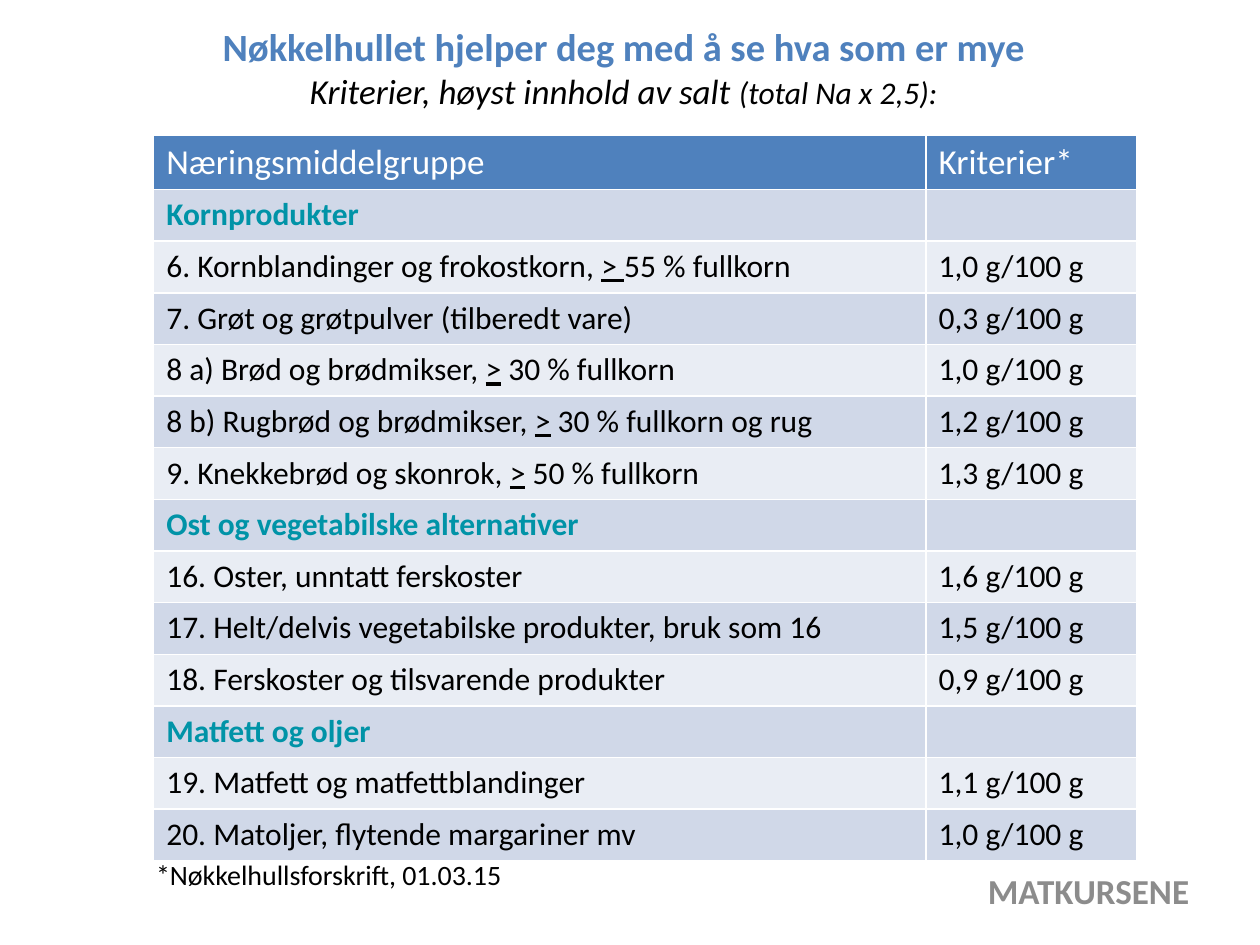
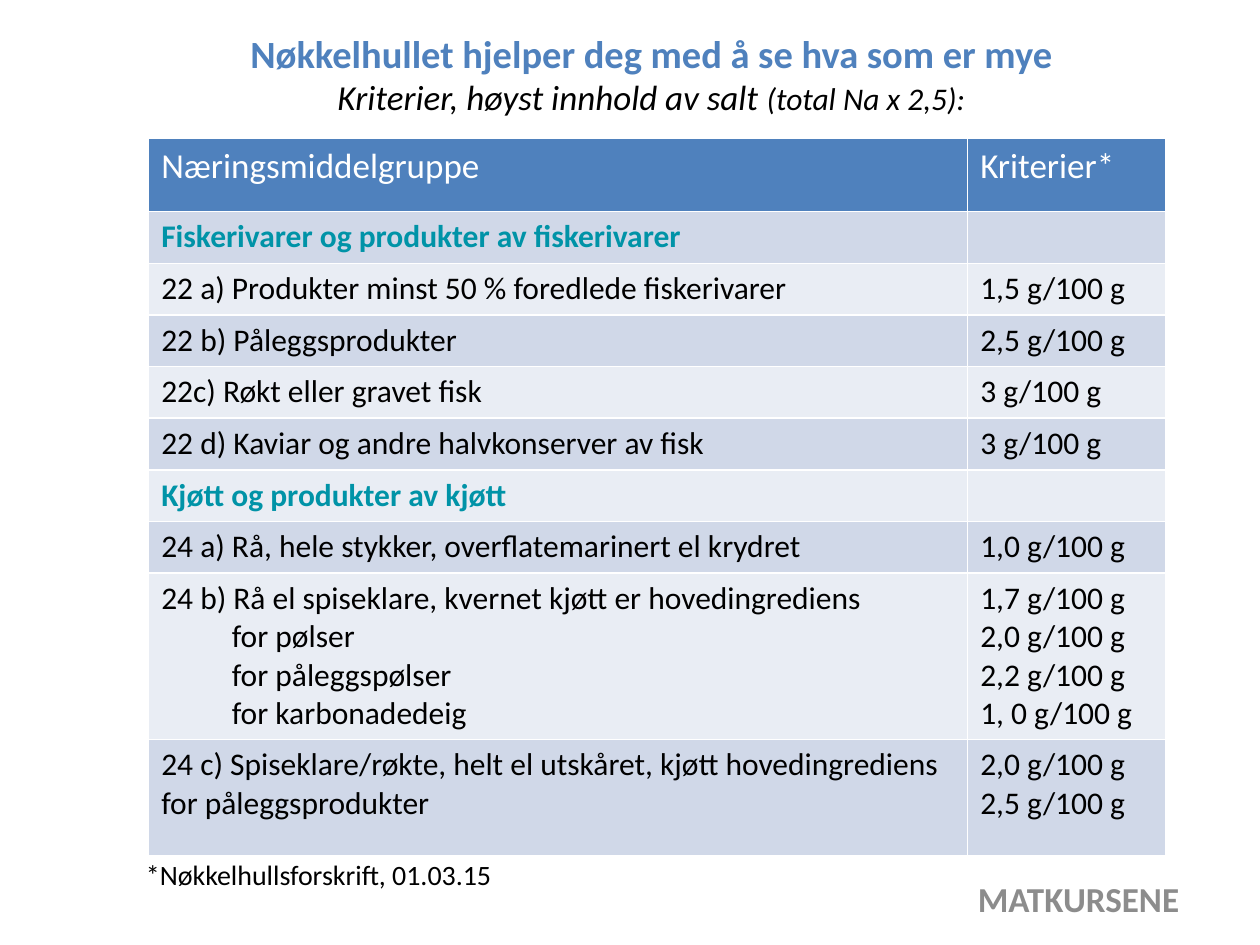
from dataclasses import dataclass
from lxml.etree import SubElement
from pptx import Presentation
from pptx.dml.color import RGBColor as RGB
from pptx.enum.text import MSO_ANCHOR as Anchor, PP_ALIGN as Align
from pptx.oxml.ns import qn
from pptx.util import Inches, Pt


@dataclass(frozen=True)
class Theme:
    font: str = "Calibri"
    blue: RGB = RGB(0x4F, 0x81, 0xBD)
    teal: RGB = RGB(0x00, 0x93, 0xA7)
    black: RGB = RGB(0, 0, 0)
    white: RGB = RGB(0xFF, 0xFF, 0xFF)
    grey: RGB = RGB(0x8C, 0x8C, 0x8C)
    bands: tuple = (RGB(0xE9, 0xED, 0xF4), RGB(0xD0, 0xD8, 0xE8))
    title: int = 22
    heading: int = 20
    body: int = 18
    note: int = 16


THEME = Theme()
UNIT = "g/100 g"
INDENT = Inches(0.56)
ROW_HEIGHT = 0.41

# Rows are (food group, limits). A group without limits is a section.
# Text between underscores is underlined; a leading tab indents a line.
CRITERIA = [
    {
        "title_at": (0.1, 0.08),
        "table_at": (1.22, 1.07),
        "columns": (6.13, 1.67),
        "header_height": 0.43,
        "tall_rows": {},
        "footer_at": (7.46, 6.95),
        "note_at": (1.14, 6.76),
        "rows": [
            ("Kornprodukter", []),
            ("6. Kornblandinger og frokostkorn, _> _55 % fullkorn", ["1,0"]),
            ("7. Grøt og grøtpulver (tilberedt vare)", ["0,3"]),
            ("8 a) Brød og brødmikser, _>_ 30 % fullkorn", ["1,0"]),
            ("8 b) Rugbrød og brødmikser, _>_ 30 % fullkorn og rug", ["1,2"]),
            ("9. Knekkebrød og skonrok, _>_ 50 % fullkorn", ["1,3"]),
            ("Ost og vegetabilske alternativer", []),
            ("16. Oster, unntatt ferskoster", ["1,6"]),
            ("17. Helt/delvis vegetabilske produkter, bruk som 16", ["1,5"]),
            ("18. Ferskoster og tilsvarende produkter", ["0,9"]),
            ("Matfett og oljer", []),
            ("19. Matfett og matfettblandinger", ["1,1"]),
            ("20. Matoljer, flytende margariner mv", ["1,0"]),
        ],
    },
    {
        "title_at": (0.32, 0.13),
        "table_at": (1.18, 1.1),
        "columns": (6.5, 1.57),
        "header_height": 0.58,
        "tall_rows": {8: 1.32, 9: 0.92},
        "footer_at": (7.38, 7.01),
        "note_at": (1.06, 6.76),
        "rows": [
            ("Fiskerivarer og produkter av fiskerivarer", []),
            ("22 a) Produkter minst 50 % foredlede fiskerivarer", ["1,5"]),
            ("22 b) Påleggsprodukter", ["2,5"]),
            ("22c) Røkt eller gravet fisk", ["3"]),
            ("22 d) Kaviar og andre halvkonserver av fisk", ["3"]),
            ("Kjøtt og produkter av kjøtt", []),
            ("24 a) Rå, hele stykker, overflatemarinert el krydret", ["1,0"]),
            ("24 b) Rå el spiseklare, kvernet kjøtt er hovedingrediens\n"
             "\tfor pølser\n\tfor påleggspølser\n\tfor karbonadedeig",
             ["1,7", "2,0", "2,2", "1, 0"]),
            ("24 c) Spiseklare/røkte, helt el utskåret, kjøtt hovedingrediens "
             "for påleggsprodukter", ["2,0", "2,5"]),
        ],
    },
]


def write(frame, text, size, color, bold=False, align=Align.LEFT):
    """Fill a text frame, one paragraph a line, with the underscore and tab marks."""
    frame.word_wrap = True
    for number, line in enumerate(text.split("\n")):
        paragraph = frame.add_paragraph() if number else frame.paragraphs[0]
        paragraph.alignment = align
        font = paragraph.font
        font.name, font.size, font.bold = THEME.font, Pt(size), bold
        font.color.rgb = color
        if line.startswith("\t"):
            paragraph._p.get_or_add_pPr().set("marL", str(INDENT))
        for part, words in enumerate(line.strip("\t").split("_")):
            if words:
                run = paragraph.add_run()
                run.text = words
                if part % 2:
                    run.font.underline = True


def style_cell(cell, fill):
    """Give a cell its fill and thin white borders."""
    props = cell._tc.get_or_add_tcPr()
    for side in ("lnL", "lnR", "lnT", "lnB"):
        border = SubElement(props, qn(f"a:{side}"), w=str(Pt(1)))
        SubElement(SubElement(border, qn("a:solidFill")), qn("a:srgbClr"), val=str(THEME.white))
    cell.fill.solid()
    cell.fill.fore_color.rgb = fill


deck = Presentation()
deck.slide_width, deck.slide_height = Inches(10), Inches(7.5)

for page in CRITERIA:
    slide = deck.slides.add_slide(deck.slide_layouts[6])
    shapes = slide.shapes

    left, top = map(Inches, page["title_at"])
    title = shapes.add_textbox(left, top, Inches(9.7), Inches(0.91)).text_frame
    title.vertical_anchor = Anchor.MIDDLE
    write(title, "Nøkkelhullet hjelper deg med å se hva som er mye",
          THEME.title, THEME.blue, bold=True, align=Align.CENTER)
    subtitle = title.add_paragraph()
    subtitle.alignment = Align.CENTER
    subtitle.font.name, subtitle.font.italic = THEME.font, True
    subtitle.font.color.rgb = THEME.black
    for words, size in (("Kriterier, høyst innhold av salt ", THEME.heading),
                        ("(total Na x 2,5):", THEME.body)):
        run = subtitle.add_run()
        run.text, run.font.size = words, Pt(size)

    heights = [page["header_height"]]
    for number in range(1, len(page["rows"]) + 1):
        heights.append(page["tall_rows"].get(number, ROW_HEIGHT))
    left, top = map(Inches, page["table_at"])
    limits_table = shapes.add_table(len(heights), 2, left, top, Inches(sum(page["columns"])),
                                    Inches(sum(heights))).table
    limits_table.horz_banding = False
    for column, width in zip(limits_table.columns, page["columns"]):
        column.width = Inches(width)
    for row, height in zip(limits_table.rows, heights):
        row.height = Inches(height)

    for col, heading in enumerate(("Næringsmiddelgruppe", "Kriterier*")):
        cell = limits_table.cell(0, col)
        style_cell(cell, THEME.blue)
        write(cell.text_frame, heading, THEME.heading, THEME.white)
    for number, (group, limits) in enumerate(page["rows"], start=1):
        color = THEME.black if limits else THEME.teal
        amounts = "\n".join(f"{limit} {UNIT}" for limit in limits)
        for col, text in enumerate((group, amounts)):
            cell = limits_table.cell(number, col)
            style_cell(cell, THEME.bands[number % 2])
            write(cell.text_frame, text, THEME.body, color, bold=not limits)

    left, top = map(Inches, page["footer_at"])
    footer = shapes.add_textbox(left, top, Inches(2.36), Inches(0.24)).text_frame
    footer.vertical_anchor = Anchor.MIDDLE
    write(footer, "MATKURSENE", THEME.heading, THEME.grey, bold=True, align=Align.CENTER)

    left, top = map(Inches, page["note_at"])
    note = shapes.add_textbox(left, top, Inches(3.71), Inches(0.37)).text_frame
    write(note, "*Nøkkelhullsforskrift, 01.03.15", THEME.note, THEME.black)

deck.save("out.pptx")
